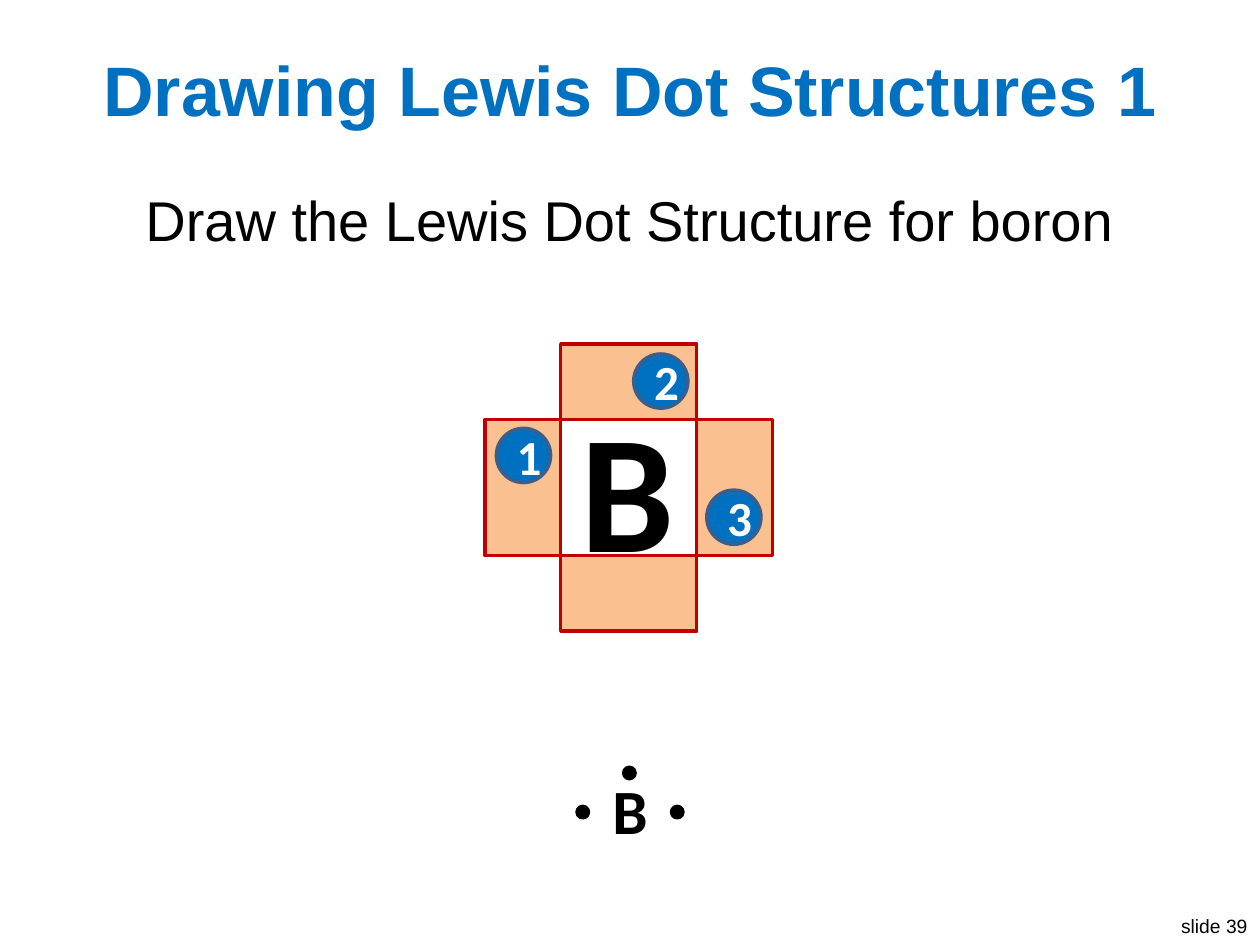
from dataclasses import dataclass

from pptx import Presentation
from pptx.dml.color import RGBColor
from pptx.enum import shapes, text
from pptx.util import Inches, Pt


@dataclass(frozen=True)
class Theme:
    head: str = "Arial"
    body: str = "Calibri"
    ink: str = "000000"
    paper: str = "FFFFFF"
    blue: str = "0070C0"
    rim: str = "3A5F8C"
    peach: str = "FAC090"
    red: str = "C00000"
    note: int = 11
    badge: int = 28
    lead: int = 32
    small: int = 36
    title: int = 40
    huge: int = 96
    line: int = 2


class Deck:
    def __init__(self, theme):
        self.theme = theme
        self.file = Presentation()
        self.file.slide_width, self.file.slide_height = Inches(10), Inches(7.5)
        self.slide = self.file.slides.add_slide(self.file.slide_layouts[6])

    def fill_text(self, frame, words, size, font, color, bold=False, align="CENTER", before=0):
        """Put one styled paragraph in a text frame."""
        para = frame.paragraphs[0]
        para.alignment = text.PP_ALIGN[align]
        if before:
            para.space_before = Pt(before)
        run = para.add_run()
        run.text = words
        look = {"name": font, "size": Pt(size), "bold": bold}
        for key, value in look.items():
            setattr(run.font, key, value)
        run.font.color.rgb = RGBColor.from_string(color)

    def label(self, box, words, *style, inset=None, wrap=True, anchor="TOP", **extra):
        frame = self.slide.shapes.add_textbox(*map(Inches, box)).text_frame
        look = {"word_wrap": wrap, "vertical_anchor": text.MSO_ANCHOR[anchor]}
        if inset is not None:
            for side in ("left", "top", "right", "bottom"):
                look["margin_" + side] = Inches(inset)
        if not wrap:
            look["auto_size"] = text.MSO_AUTO_SIZE.SHAPE_TO_FIT_TEXT
        for key, value in look.items():
            setattr(frame, key, value)
        self.fill_text(frame, words, *style, **extra)

    def shape(self, kind, box, fill, line):
        item = self.slide.shapes.add_shape(shapes.MSO_SHAPE[kind], *map(Inches, box))
        item.shadow.inherit = False
        if fill:
            item.fill.solid()
            item.fill.fore_color.rgb = RGBColor.from_string(fill)
        else:
            item.fill.background()
        item.line.color.rgb = RGBColor.from_string(line)
        item.line.width = Pt(self.theme.line)
        return item

    def symbol(self, box, words, size):
        t = self.theme
        self.label(box, words, size, t.body, t.ink, bold=True, inset=0, wrap=False)

    def dot(self, x, y):
        self.shape("OVAL", (x, y, 0.09, 0.09), self.theme.ink, self.theme.ink)

    def cross(self, x, y, core, arm):
        """Draw a square core at x, y with four arms around it."""
        t = self.theme
        arms = [
            (x + core, y, arm, core),
            (x, y + core, core, arm),
            (x - arm, y, arm, core),
            (x, y - arm, core, arm),
        ]
        for box in arms:
            self.shape("RECTANGLE", box, t.peach, t.red)
        self.shape("RECTANGLE", (x, y, core, core), None, t.red)

    def badge(self, x, y, words):
        t = self.theme
        item = self.shape("OVAL", (x, y, 0.43, 0.43), t.blue, t.rim)
        item.text_frame.vertical_anchor = text.MSO_ANCHOR.MIDDLE
        self.fill_text(item.text_frame, words, t.badge, t.body, t.paper, bold=True)


def main():
    t = Theme()
    deck = Deck(t)
    deck.label((9.25, 7.21, 0.75, 0.29), "slide 39", t.note, t.head, t.ink,
               wrap=False, align="RIGHT")
    deck.label((0.2, 0.3, 9.6, 0.8), "Drawing Lewis Dot Structures 1",
               t.title, t.head, t.blue, bold=True, anchor="MIDDLE")
    deck.label((0.2, 1.42, 9.6, 1.2), "Draw the Lewis Dot Structure for boron",
               t.lead, t.head, t.ink, before=12)

    deck.symbol((4.86, 6.12, 0.28, 0.61), "B", t.small)
    for x, y in ((4.95, 6.09), (4.58, 6.4), (5.33, 6.4)):
        deck.dot(x, y)

    deck.cross(4.45, 3.33, core=1.08, arm=0.6)
    for x, y, num in ((3.94, 3.4, "1"), (5.61, 3.89, "3"), (5.03, 2.81, "2")):
        deck.badge(x, y, num)
    deck.symbol((4.6, 3.05, 0.76, 1.62), "B", t.huge)
    deck.file.save("out.pptx")


if __name__ == "__main__":
    main()
